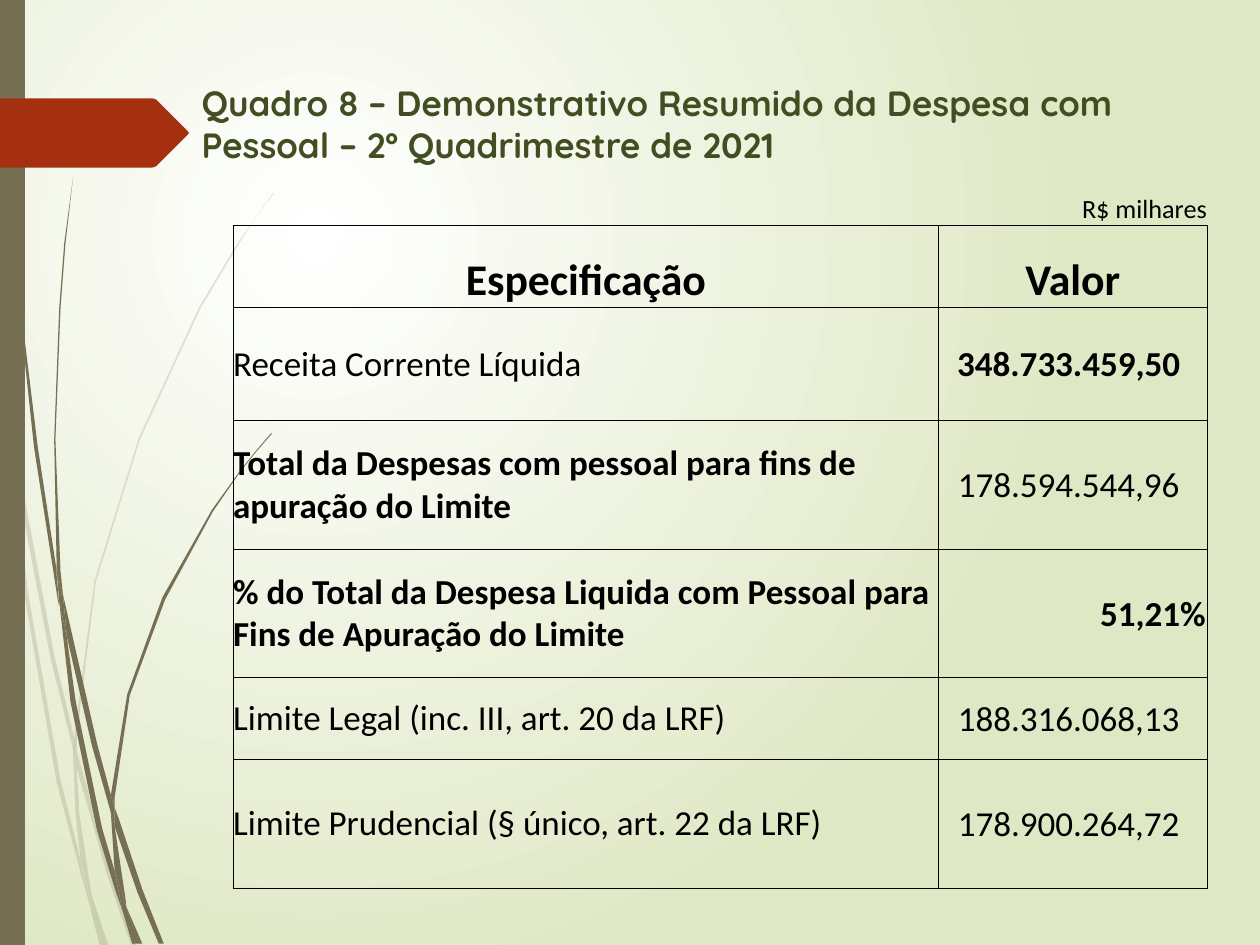
from dataclasses import dataclass

import lxml.etree
import pptx
import pptx.dml.color
import pptx.enum.text
import pptx.oxml.ns
import pptx.util

Inches = pptx.util.Inches
RGBColor = pptx.dml.color.RGBColor
Align = pptx.enum.text.PP_ALIGN
Anchor = pptx.enum.text.MSO_ANCHOR
qn = pptx.oxml.ns.qn

BLACK = RGBColor(0x00, 0x00, 0x00)
WHITE = RGBColor(0xFF, 0xFF, 0xFF)
LIME = RGBColor(0xDF, 0xE8, 0xC4)
OLIVE = RGBColor(0x76, 0x6F, 0x54)
RUST = RGBColor(0xA5, 0x30, 0x10)
MOSS = RGBColor(0x42, 0x4D, 0x22)

Point = tuple[float, float]


@dataclass
class Blade:
    points: list[Point]
    color: RGBColor = OLIVE
    alpha: int = 100


@dataclass
class Row:
    label: str
    value: str
    height: float
    size: int = 20
    strong: bool = False
    bold: bool = False
    start: Align = Align.LEFT
    align: Align = Align.CENTER
    anchor: Anchor = Anchor.MIDDLE
    inset: float = 0.01


PALE = [
    [(0.08, 3.5), (0.06, 3.22), (0, 2.82), (0, 2.99), (0.07, 3.44)],
    [(0.4, 5.22), (0.59, 5.99), (0.59, 5.86), (0.43, 5.2), (0.1, 3.45), (0.12, 3.76)],
    [(0.64, 6.07), (0.61, 5.96), (0.61, 6.1), (0.85, 6.94), (1.04, 7.5), (1.08, 7.5),
     (0.88, 6.92)],
    [(0.83, 7.5), (0.86, 7.5), (0.73, 7.11)],
    [(0.64, 6.83), (0.48, 6.19), (0.22, 4.69), (0.12, 3.76), (0.08, 3.5), (0.19, 4.7),
     (0.45, 6.21), (0.64, 6.93), (0.7, 7.14), (0.69, 7.07)],
    [(0.58, 5.99), (0.6, 6.46), (0.64, 6.83), (0.67, 6.92), (0.73, 7.11), (0.72, 7.06),
     (0.63, 6.46), (0.61, 6.1), (0.61, 6.08)],
    [(0.61, 5.84), (0.76, 4.62), (1.11, 3.49), (1.59, 2.45), (1.87, 1.98), (2.01, 1.75),
     (2.17, 1.54), (2.17, 1.53), (2.01, 1.75), (1.86, 1.97), (1.58, 2.44), (1.1, 3.48),
     (0.75, 4.61), (0.59, 5.84), (0.59, 5.86), (0.61, 5.96)],
    [(0.7, 7.14), (0.79, 7.5), (0.82, 7.5)],
    [(0.61, 6.08), (0.61, 6.1), (0.61, 5.96), (0.59, 5.86), (0.58, 5.99)],
    [(0.67, 6.92), (0.65, 6.83), (0.69, 7.07), (0.7, 7.14), (0.82, 7.5), (0.83, 7.5),
     (0.73, 7.11)],
]
DARK = [
    [(0.05, 1.1), (0.14, 2.33), (0.27, 3.55), (0.46, 4.77), (0.47, 4.81), (0.45, 4.57),
     (0.45, 4.53), (0.3, 3.55), (0.15, 2.32), (0.06, 1.09), (0.04, 0.48), (0.03, 0),
     (0.02, 0), (0.03, 0.48)],
    [(0.73, 5.92), (0.88, 6.45), (0.88, 6.33), (0.88, 6.31), (0.77, 5.9), (0.5, 4.72),
     (0.53, 5.05)],
    [(0.94, 6.49), (0.91, 6.41), (0.91, 6.56), (1.09, 7.08), (1.26, 7.49), (1.3, 7.49),
     (1.13, 7.06)],
    [(0.91, 6.91), (0.81, 6.57), (0.6, 5.56), (0.53, 5.05), (0.47, 4.77), (0.56, 5.57),
     (0.77, 6.59), (0.92, 7.08), (0.97, 7.22), (0.96, 7.17)],
    [(0.5, 4.72), (0.48, 4.53), (0.44, 3.49), (0.48, 2.45), (0.52, 1.93), (0.58, 1.41),
     (0.51, 1.93), (0.47, 2.45), (0.43, 3.49), (0.45, 4.49), (0.49, 4.72)],
    [(1.1, 7.49), (1.13, 7.49), (1, 7.19)],
    [(0.47, 4.77), (0.53, 5.05), (0.5, 4.72), (0.49, 4.72), (0.45, 4.49), (0.45, 4.53)],
    [(0.91, 6.33), (1.03, 5.52), (1.31, 4.76), (1.69, 4.06), (1.91, 3.74), (2.03, 3.59),
     (2.16, 3.44), (2.15, 3.44), (2.03, 3.58), (1.91, 3.73), (1.68, 4.05), (1.29, 4.74),
     (1.01, 5.51), (0.88, 6.31), (0.91, 6.41)],
    [(0.97, 7.22), (1.05, 7.49), (1.08, 7.49)],
    [(0.88, 6.45), (0.91, 6.91), (0.96, 7.06), (1, 7.19), (1, 7.16), (0.91, 6.56),
     (0.9, 6.51)],
    [(0.88, 6.45), (0.9, 6.51), (0.91, 6.56), (0.91, 6.41), (0.88, 6.31), (0.88, 6.33)],
    [(0.96, 7.06), (0.91, 6.91), (0.96, 7.17), (0.97, 7.22), (1.08, 7.49), (1.1, 7.49),
     (1, 7.19)],
]
BAR = [(0, 0), (0.2, 0), (0.2, 7.5), (0, 7.5)]
ARROW = [(0, 0.78), (1.21, 0.78), (1.24, 0.79), (1.49, 1.04), (1.5, 1.055),
         (1.49, 1.07), (1.24, 1.32), (1.21, 1.33), (0, 1.33)]

WIDTHS = [2.31, 1.29, 1.29, 0.71, 2.13]
LAST = len(WIDTHS) - 1
ROWS = [
    Row("", "R$ milhares", 0.64, 15, align=Align.RIGHT, anchor=Anchor.BOTTOM, inset=0),
    Row("Especificação", "Valor", 0.65, 25, True, True, Align.CENTER,
        anchor=Anchor.BOTTOM, inset=0),
    Row("Receita Corrente Líquida", "348.733.459,50 ", 0.9, bold=True),
    Row("Total da Despesas com pessoal para fins de apuração do Limite",
        "178.594.544,96 ", 1.02, strong=True),
    Row("% do Total da Despesa Liquida com Pessoal para Fins de Apuração do Limite",
        "51,21%", 1.02, strong=True, bold=True, align=Align.RIGHT),
    Row("Limite Legal (inc. III, art. 20 da LRF)", "188.316.068,13 ", 0.65),
    Row("Limite Prudencial (§ único, art. 22 da LRF)", "178.900.264,72 ", 1.02),
]


def write(frame, text: str, *, size: int, font: str = "Calibri", bold: bool = False,
          color: RGBColor = BLACK, align: Align = Align.LEFT) -> None:
    para = frame.paragraphs[0]
    para.alignment = align
    run = para.add_run()
    run.text = text
    run.font.size = pptx.util.Pt(size)
    run.font.name = font
    run.font.bold = bold
    run.font.color.rgb = color


def paint(slide) -> None:
    fill = slide.background.fill
    fill.gradient()
    for stop, color, place in zip(fill.gradient_stops, (WHITE, LIME), (0, 1)):
        stop.color.rgb = color
        stop.position = place
    grad = slide.background._cSld.find(".//" + qn("a:gradFill"))
    grad.remove(grad.find(qn("a:lin")))
    ring = lxml.etree.SubElement(grad, qn("a:path"), {"path": "circle"})
    lxml.etree.SubElement(ring, qn("a:fillToRect"),
                          dict(l="50000", t="50000", r="100000", b="100000"))


def draw(slide, blade: Blade) -> None:
    first, *rest = [(Inches(x), Inches(y)) for x, y in blade.points]
    pen = slide.shapes.build_freeform(*first)
    pen.add_line_segments(rest, close=True)
    shape = pen.convert_to_shape()
    shape.shadow.inherit = False
    shape.line.fill.background()
    shape.fill.solid()
    shape.fill.fore_color.rgb = blade.color
    if blade.alpha < 100:
        tint = shape._element.spPr.find(qn("a:solidFill"))[0]
        lxml.etree.SubElement(tint, qn("a:alpha"), val=str(blade.alpha * 1000))


def edge(cell, sides: str) -> None:
    cell.fill.background()
    props = cell._tc.get_or_add_tcPr()
    for spot, side in enumerate("LRTB"):
        line = lxml.etree.Element(qn("a:ln" + side), w="6350")
        props.insert(spot, line)
        if side in sides:
            fill = lxml.etree.SubElement(line, qn("a:solidFill"))
            lxml.etree.SubElement(fill, qn("a:srgbClr"), val=str(BLACK))
        else:
            lxml.etree.SubElement(line, qn("a:noFill"))


def place(cell, text: str, row: Row, bold: bool, align: Align, inset: float) -> None:
    cell.margin_left = cell.margin_right = cell.margin_top = Inches(inset)
    cell.margin_bottom = 0
    cell.vertical_anchor = row.anchor
    write(cell.text_frame, text, size=row.size, bold=bold, align=align)


def tabulate(slide) -> None:
    table = slide.shapes.add_table(len(ROWS), len(WIDTHS), Inches(1.85), Inches(1.15),
                                   Inches(7.72), Inches(5.91)).table
    table.first_row = table.horz_banding = False
    for col, width in zip(table.columns, WIDTHS):
        col.width = Inches(width)
    for at, row in enumerate(ROWS):
        table.rows[at].height = Inches(row.height)
        for col in range(len(WIDTHS)):
            edge(table.cell(at, col), "LRTB" if row.label else "B")
        if row.label:
            head = table.cell(at, 0)
            head.merge(table.cell(at, LAST - 1))
            place(head, row.label, row, row.strong, row.start, 0)
        place(table.cell(at, LAST), row.value, row, row.bold, row.align, row.inset)


def main() -> None:
    deck = pptx.Presentation()
    deck.slide_width, deck.slide_height = Inches(10), Inches(7.5)
    slide = deck.slides.add_slide(deck.slide_layouts[5])
    paint(slide)
    blades = [Blade(points, alpha=20) for points in PALE]
    blades += [Blade(points) for points in DARK + [BAR]]
    for blade in blades + [Blade(ARROW, RUST)]:
        draw(slide, blade)
    title = slide.shapes.title
    title.left, title.top = Inches(1.5), Inches(0.6)
    title.width, title.height = Inches(8.5), Inches(0.67)
    frame = title.text_frame
    frame.word_wrap = True
    frame.auto_size = pptx.enum.text.MSO_AUTO_SIZE.NONE
    frame.vertical_anchor = Anchor.TOP
    write(frame, "Quadro 8 – Demonstrativo Resumido da Despesa com Pessoal"
          " – 2º Quadrimestre de 2021", size=20, font="Quicksand", bold=True, color=MOSS)
    tabulate(slide)
    deck.save("out.pptx")


if __name__ == "__main__":
    main()
